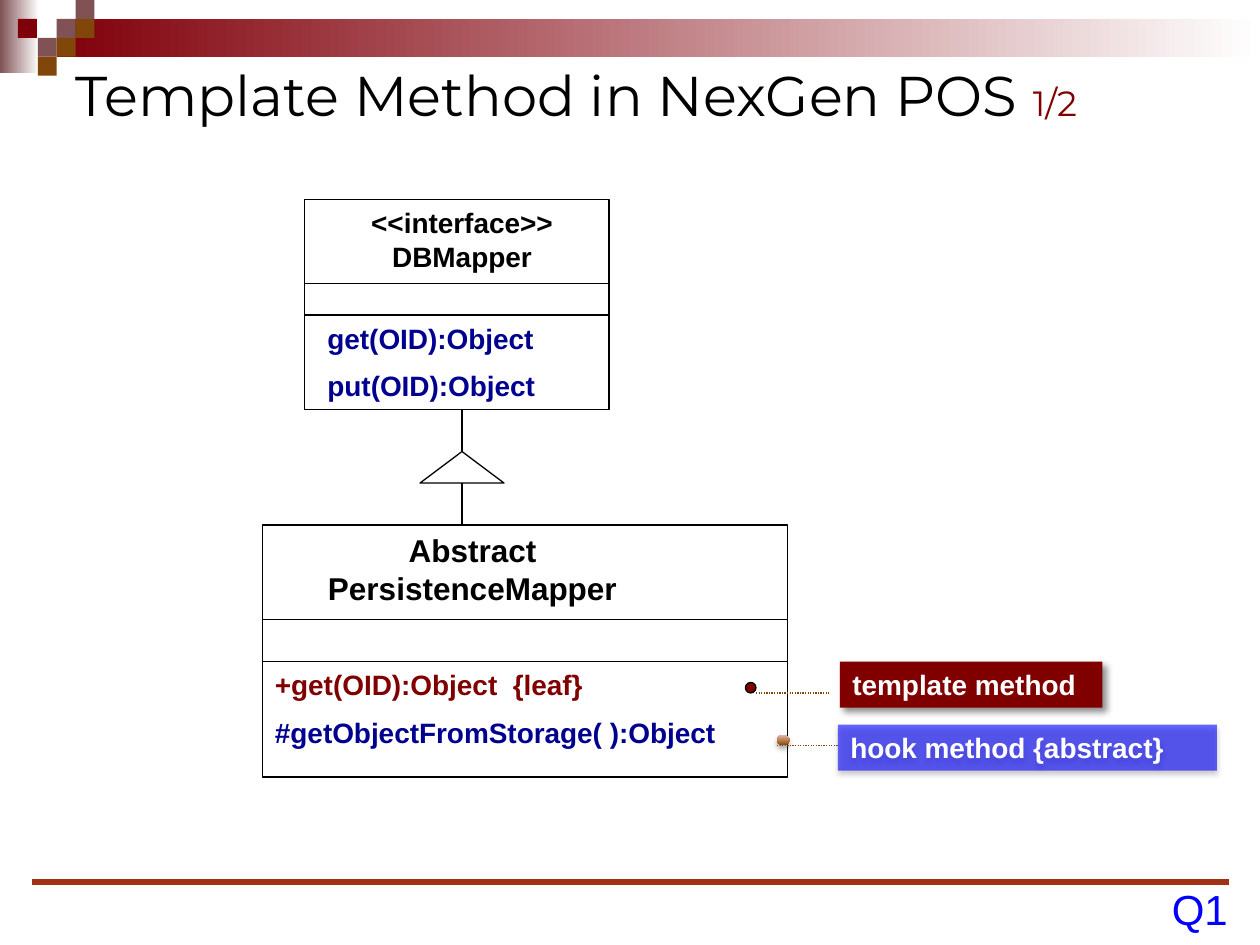
from lxml import etree
from pptx import Presentation
from pptx.dml.color import RGBColor
from pptx.enum.dml import MSO_LINE
from pptx.enum.shapes import MSO_CONNECTOR, MSO_SHAPE
from pptx.enum.text import MSO_ANCHOR, MSO_AUTO_SIZE, PP_ALIGN
from pptx.oxml.ns import qn
from pptx.util import Inches, Pt

RECT, OVAL, TRIANGLE = MSO_SHAPE.RECTANGLE, MSO_SHAPE.OVAL, MSO_SHAPE.ISOSCELES_TRIANGLE
STRAIGHT = MSO_CONNECTOR.STRAIGHT
DOTTED = MSO_LINE.ROUND_DOT
MIDDLE = MSO_ANCHOR.MIDDLE
TOP = MSO_ANCHOR.TOP
LEFT, CENTER = PP_ALIGN.LEFT, PP_ALIGN.CENTER
NO_FIT = MSO_AUTO_SIZE.NONE

GRID = 1 / 12
TILE = 0.15
BLACK, WHITE, NAVY, MAROON = "000000", "FFFFFF", "000090", "800000"
WINE, MAUVE, BROWN = "80000A", "805255", "81460A"
SOFT_SHADOW = (BLACK, 35, 3.1, 1.8, 90)
HARD_SHADOW = (BLACK, 43, 4, 3, 45)


def rgb(value):
    """Turn a hex string into a colour."""
    return RGBColor.from_string(value)


def cells(*values):
    """Turn grid units into lengths."""
    return [Inches(v * GRID) for v in values]


def add_shadow(shape, color, alpha, blur, dist, angle):
    """Give a shape an outer shadow."""
    effects = shape._element.spPr.find(qn("a:effectLst"))
    outer = etree.SubElement(effects, qn("a:outerShdw"), blurRad=str(Pt(blur)),
                             dist=str(Pt(dist)), dir=str(angle * 60000), rotWithShape="0")
    clr = etree.SubElement(outer, qn("a:srgbClr"), val=color)
    etree.SubElement(clr, qn("a:alpha"), val=str(alpha * 1000))


def add_box(s, kind, box, fill, line=None, angle=0, alpha=None, shadow=None):
    """Add a preset shape with a solid colour or a pair of gradient colours."""
    sp = s.shapes.add_shape(kind, *box)
    sp.shadow.inherit = False
    if isinstance(fill, tuple):
        sp.fill.gradient()
        sp.fill.gradient_angle = angle
        for stop, color in zip(sp.fill.gradient_stops, fill):
            stop.color.rgb = rgb(color)
    else:
        sp.fill.solid()
        sp.fill.fore_color.rgb = rgb(fill)
    if alpha:
        clr = sp._element.spPr.find(qn("a:solidFill"))[0]
        etree.SubElement(clr, qn("a:alpha"), val=str(alpha * 1000))
    if line:
        sp.line.color.rgb = rgb(line)
        sp.line.width = Pt(0.75)
    else:
        sp.line.fill.background()
    if shadow:
        add_shadow(sp, *shadow)
    return sp


def add_line(s, ends, color=BLACK, width=0.75, dash=None):
    """Add a straight line between two points."""
    ln = s.shapes.add_connector(STRAIGHT, *ends)
    ln.line.color.rgb = rgb(color)
    ln.line.width = Pt(width)
    if dash:
        ln.line.dash_style = dash
    etree.SubElement(ln._element.spPr, qn("a:effectLst"))


def write(sp, lines, size=16, align=LEFT, bold=True):
    """Write coloured paragraphs into a shape."""
    tf = sp.text_frame
    tf.word_wrap = True
    tf.vertical_anchor = TOP
    for i, (text, color) in enumerate(lines):
        p = tf.add_paragraph() if i else tf.paragraphs[0]
        p.text = text
        p.alignment = align
        if i:
            p.space_before = Pt(size / 2)
        font = p.runs[0].font
        font.name, font.size, font.bold = "Arial", Pt(size), bold
        font.color.rgb = rgb(color)
    return tf


def add_frame(s, width, height):
    """Draw the top band with its mosaic and the bottom rule."""
    add_box(s, RECT, (0, 0, Inches(0.31), Inches(0.58)), (MAUVE, WHITE))
    left = Inches(3 * TILE)
    add_box(s, RECT, (left, Inches(TILE), width - left, Inches(2 * TILE)), (WINE, WHITE))
    mosaic = [(3, 1, MAUVE), (4, 0, MAUVE), (4, 1, BROWN), (2, 2, MAUVE),
              (0.95, 1, WINE), (3, 2, BROWN), (2, 3, BROWN)]
    side = Inches(TILE)
    for col, row, color in mosaic:
        add_box(s, RECT, (int(col * side), row * side, side, side), color)
    margin, y = int(width * 0.025), int(height * 14 / 15)
    add_line(s, (margin, y, width - margin, y), "A13214", 3)


def add_title(s, box, parts):
    """Place the title and format each of its runs."""
    title = s.shapes.title
    title.left, title.top, title.width, title.height = box
    tf = title.text_frame
    tf.auto_size = NO_FIT
    tf.vertical_anchor = MIDDLE
    p = tf.paragraphs[0]
    p.alignment = LEFT
    for text, size, color in parts:
        r = p.add_run()
        r.text = text
        r.font.name, r.font.size = "Montserrat", Pt(size)
        r.font.color.rgb = rgb(color)


def add_class(s, box, rules, name, name_span, size, members, member_span):
    """Draw a class box with its name, two dividers and members."""
    x, y, w, h = box
    add_box(s, RECT, cells(*box), WHITE, BLACK)
    for row in rules:
        add_line(s, cells(x, y + row, x + w, y + row))
    label = s.shapes.add_textbox(*cells(x + name_span[0], y, name_span[1], rules[0]))
    write(label, [(name, BLACK)], size, CENTER)
    body = s.shapes.add_textbox(*cells(x + member_span[0], y + rules[1],
                                       member_span[1], h - rules[1]))
    write(body, members)


def add_inheritance(s, x, top, bottom):
    """Draw a generalisation arrow between two class boxes."""
    tip, base = top + 4, bottom - 4
    add_box(s, TRIANGLE, cells(x - 4, tip, 8, base - tip), WHITE, BLACK)
    add_line(s, cells(x, base, x, bottom))
    add_line(s, cells(x, tip, x, top))


def add_callout(s, box, text, dot, leader, fill, dot_fill, dot_line, alpha, shadow, dot_shadow):
    """Draw a label tied by a dotted leader to a dot."""
    label = add_box(s, RECT, cells(*box), fill, alpha=alpha, shadow=shadow)
    write(label, [(text, WHITE)])
    add_box(s, OVAL, cells(*dot), dot_fill, dot_line, 90, shadow=dot_shadow)
    add_line(s, cells(*leader), BROWN, dash=DOTTED)


def add_tag(s, box, text):
    """Write the question tag in the corner."""
    tf = write(s.shapes.add_textbox(*box), [(text, "0000FF")], 24, bold=False)
    tf.word_wrap = False
    tf.vertical_anchor = MIDDLE
    tf.margin_left = tf.margin_right = tf.margin_top = tf.margin_bottom = 0


def main():
    """Build the slide."""
    prs = Presentation()
    prs.slide_width, prs.slide_height = Inches(10), Inches(7.5)
    s = prs.slides.add_slide(prs.slide_layouts[5])
    add_frame(s, prs.slide_width, prs.slide_height)
    add_title(s, cells(6, 5, 108, 8),
              [("Template Method in NexGen POS ", 32, BLACK), ("1/2", 20, MAROON)])
    add_class(s, (29, 19, 29, 20), (8, 11), "<<interface>> DBMapper", (1, 28), 16,
              [("get(OID):Object", NAVY), ("put(OID):Object", NAVY)], (1, 26))
    add_class(s, (25, 50, 50, 24), (9, 13), "Abstract PersistenceMapper", (5, 30), 18,
              [("+get(OID):Object  {leaf}", MAROON),
               ("#getObjectFromStorage( ):Object", NAVY)], (0, 50))
    add_callout(s, (80, 63, 25, 4.4), "template method", (71, 65, 1, 1), (72, 66, 79, 66),
                MAROON, MAROON, BLACK, None, HARD_SHADOW, None)
    add_callout(s, (79.8, 69, 36.1, 4.4), "hook method {abstract}", (74, 70, 1.2, 1),
                (74, 71, 79.8, 71), "0000FF", ("8B4600", "E1B7A9"), None, 59,
                SOFT_SHADOW, SOFT_SHADOW)
    add_inheritance(s, 44, 39, 50)
    add_tag(s, cells(111.6, 84.1, 5.4, 4.8), "Q1")
    prs.save("out.pptx")


if __name__ == "__main__":
    main()
